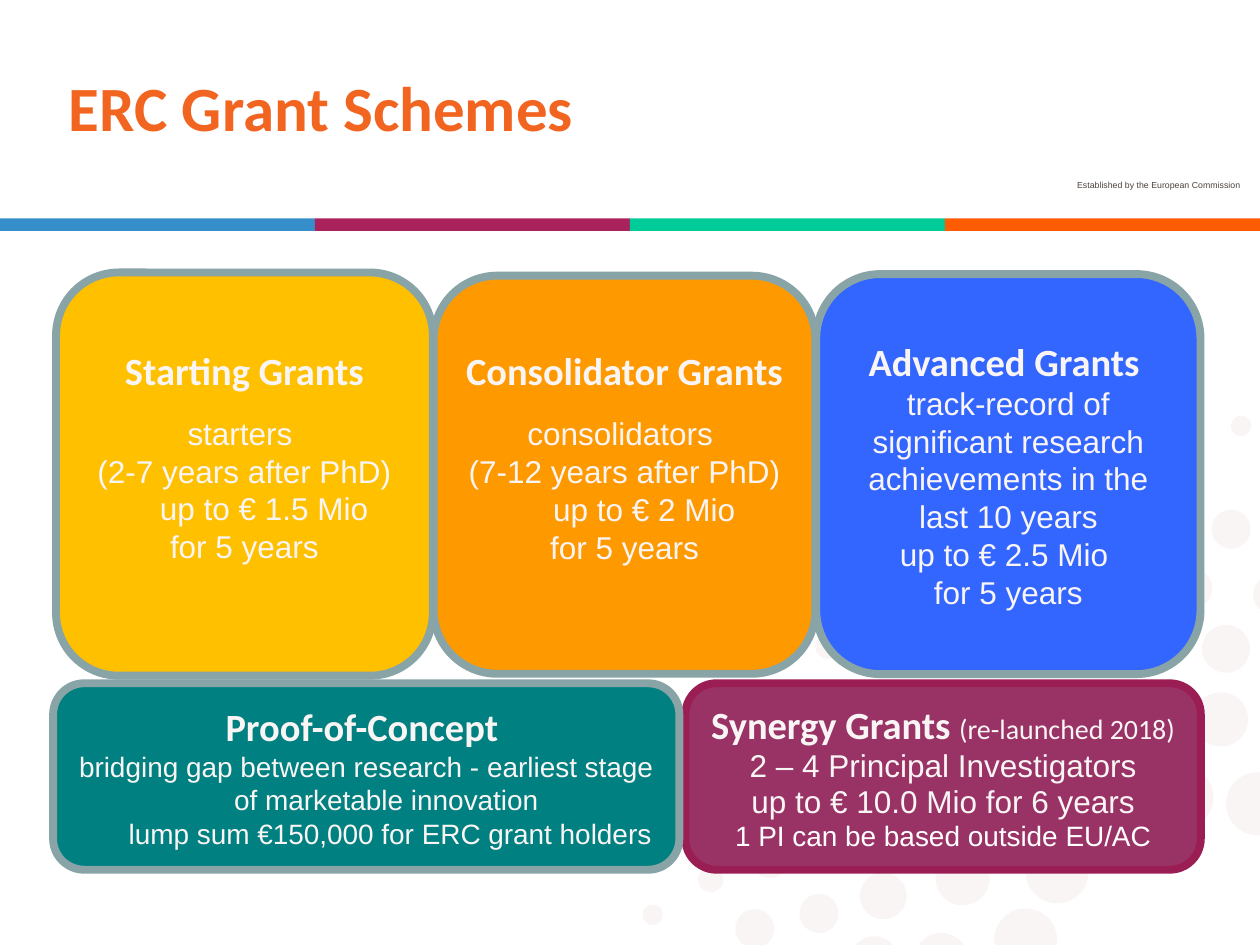
import pptx
import pptx.util
import pptx.dml.color
import pptx.enum.shapes
import pptx.enum.text

HUES = {
    "dots": "FAF5F5", "sky": "368ECA", "plum": "AA225C", "mint": "00CC99",
    "flame": "FD5C03", "note": "4B413C", "title": "F16521", "edge": "89A4A7",
    "wine": "9A1E53", "gold": "FFC000", "blue": "3366FF", "berry": "993366",
    "teal": "008080", "amber": "FF9900", "pale": "FAF5F5", "white": "FFFFFF",
}
COLS, ROWS = 100, 75
KINDS = pptx.enum.shapes.MSO_SHAPE
ALIGN = pptx.enum.text.PP_ALIGN
MIDDLE = pptx.enum.text.MSO_ANCHOR.MIDDLE
FIXED = pptx.enum.text.MSO_AUTO_SIZE.NONE
HANG = pptx.util.Inches(0.38)


class Deck:
    def __init__(self):
        self.prs = pptx.Presentation()
        self.prs.slide_width = pptx.util.Inches(10)
        self.prs.slide_height = pptx.util.Inches(7.5)
        self.slide = self.prs.slides.add_slide(self.prs.slide_layouts[5])

    def area(self, left, top, width, height):
        col = self.prs.slide_width / COLS
        row = self.prs.slide_height / ROWS
        return [round(n) for n in (left * col, top * row, width * col, height * row)]

    def hue(self, name):
        return pptx.dml.color.RGBColor.from_string(HUES[name])

    def font(self, font, size, face="Arial", hue="pale", bold=False):
        font.size = pptx.util.Pt(size)
        font.name = face
        font.bold = bold
        font.color.rgb = self.hue(hue)

    def shape(self, kind, area, fill, edge=None):
        item = self.slide.shapes.add_shape(kind, *self.area(*area))
        item.shadow.inherit = False
        item.fill.solid()
        item.fill.fore_color.rgb = self.hue(fill)
        if edge:
            item.line.color.rgb = self.hue(edge)
            item.line.width = pptx.util.Pt(4.5)
        else:
            item.line.fill.background()
        return item

    def dot(self, x, y, size):
        area = (x - size / 2, y - size / 2, size, size)
        self.shape(KINDS.OVAL, area, "dots").rotation = 60

    def title(self, text, area):
        item = self.slide.shapes.title
        item.left, item.top, item.width, item.height = self.area(*area)
        frame = item.text_frame
        frame.text = text
        frame.word_wrap = False
        frame.auto_size = FIXED
        frame.vertical_anchor = MIDDLE
        para = frame.paragraphs[0]
        para.alignment = ALIGN.LEFT
        self.font(para.font, 36, "Calibri", "title", True)

    def note(self, text, area):
        item = self.slide.shapes.add_textbox(*self.area(*area))
        item.text_frame.word_wrap = True
        para = item.text_frame.paragraphs[0]
        para.text = text
        self.font(para.font, 5, hue="note")

    def line(self, para, text):
        para.text = text
        para.alignment = ALIGN.CENTER
        props = para._p.get_or_add_pPr()
        props.set("marL", str(HANG))
        props.set("indent", str(-HANG))

    def card(self, area, fill, head, body, edge="edge", size=18, gap=0,
             foot=0.05, tag=None, tight=False):
        frame = self.shape(KINDS.ROUNDED_RECTANGLE, area, fill, edge).text_frame
        frame.word_wrap = True
        frame.vertical_anchor = MIDDLE
        frame.margin_bottom = pptx.util.Inches(foot)
        para = frame.paragraphs[0]
        self.line(para, head)
        self.font(para.font, 22, "Calibri", bold=True)
        if tag:
            self.font(para.runs[0].font, 22, "Calibri", bold=True)
            run = para.add_run()
            run.text = tag
            self.font(run.font, 16, "Calibri")
        for spot, text in enumerate(body):
            para = frame.add_paragraph()
            self.line(para, text)
            last = tight and spot == len(body) - 1
            points = 16 if last else size
            if tight:
                para.line_spacing = 0.8
                para.space_before = pptx.util.Pt(points * 0.2)
            elif gap and spot == 0:
                para.space_before = pptx.util.Pt(gap)
            self.font(para.font, points, hue="white" if last else "pale")


def main():
    deck = Deck()
    dots = [
        (81.4, 74.6, 5), (83.9, 69.2, 5), (93.8, 63.3, 5), (99.8, 63.8, 5),
        (96.9, 57.1, 4.3), (76.4, 69.7, 4.3), (74.7, 76.2, 4.3),
        (97.3, 51.5, 3.8), (69.4, 76.2, 3.8), (70.1, 71.1, 3.7),
        (65, 72.5, 3.1), (94.6, 46.7, 3.2), (101, 47.2, 3.1),
        (59.9, 73.7, 3.1), (61.1, 68.2, 3), (97.7, 42, 3.1),
        (51.8, 72.6, 1.6), (98.5, 33.8, 1.6), (56.4, 69.8, 2),
        (65.7, 51.3, 2),
    ]
    for dot in dots:
        deck.dot(*dot)
    bands = ("sky", "plum", "mint", "flame")
    wide = COLS / len(bands)
    for spot, hue in enumerate(bands):
        deck.shape(KINDS.RECTANGLE, (spot * wide, 17.33, wide, 1), hue)
    deck.note("Established by the European Commission", (84.5, 13.74, 15.8, 1.9))
    deck.title("ERC Grant Schemes", (4.45, 4.9, 42.5, 7.1))

    deck.card((4.45, 21.63, 29.9, 32), "gold", "Starting Grants",
              ["starters ", "(2-7 years after PhD) up to € 1.5 Mio ", "for 5 years"],
              gap=12, foot=0.34)
    deck.card((64.78, 21.75, 30.5, 31.75), "blue", "Advanced Grants ",
              ["track-record of", "significant research", "achievements in the",
               "last 10 years", "up to € 2.5 Mio ", "for 5 years"])
    deck.card((54.4, 54.23, 40.9, 14.8), "berry", "Synergy Grants ",
              ["2 – 4 Principal Investigators", "up to € 10.0 Mio for 6 years",
               "1 PI can be based outside EU/AC"],
              edge="wine", tag="(re-launched 2018)", tight=True)
    deck.card((4.22, 54.23, 49.7, 14.8), "teal", "Proof-of-Concept ",
              ["bridging gap between research - earliest stage of marketable "
               "innovation \vlump sum €150,000 for ERC grant holders"], size=16)
    deck.card((34.42, 21.88, 30.3, 31.6), "amber", "Consolidator Grants",
              ["consolidators ", "(7-12 years after PhD) up to € 2 Mio ", "for 5 years"],
              gap=12, foot=0.34)
    deck.prs.save("out.pptx")


if __name__ == "__main__":
    main()
